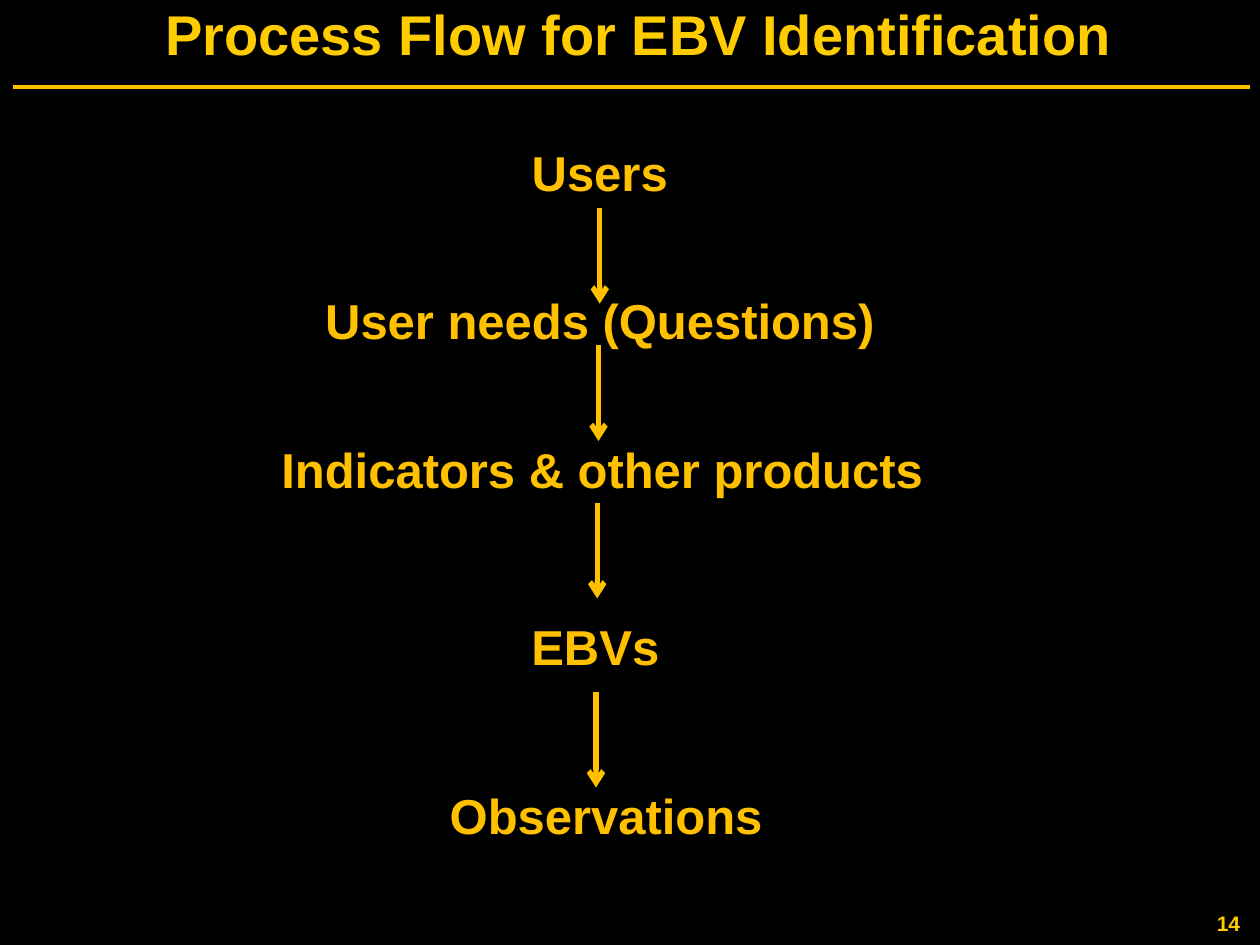
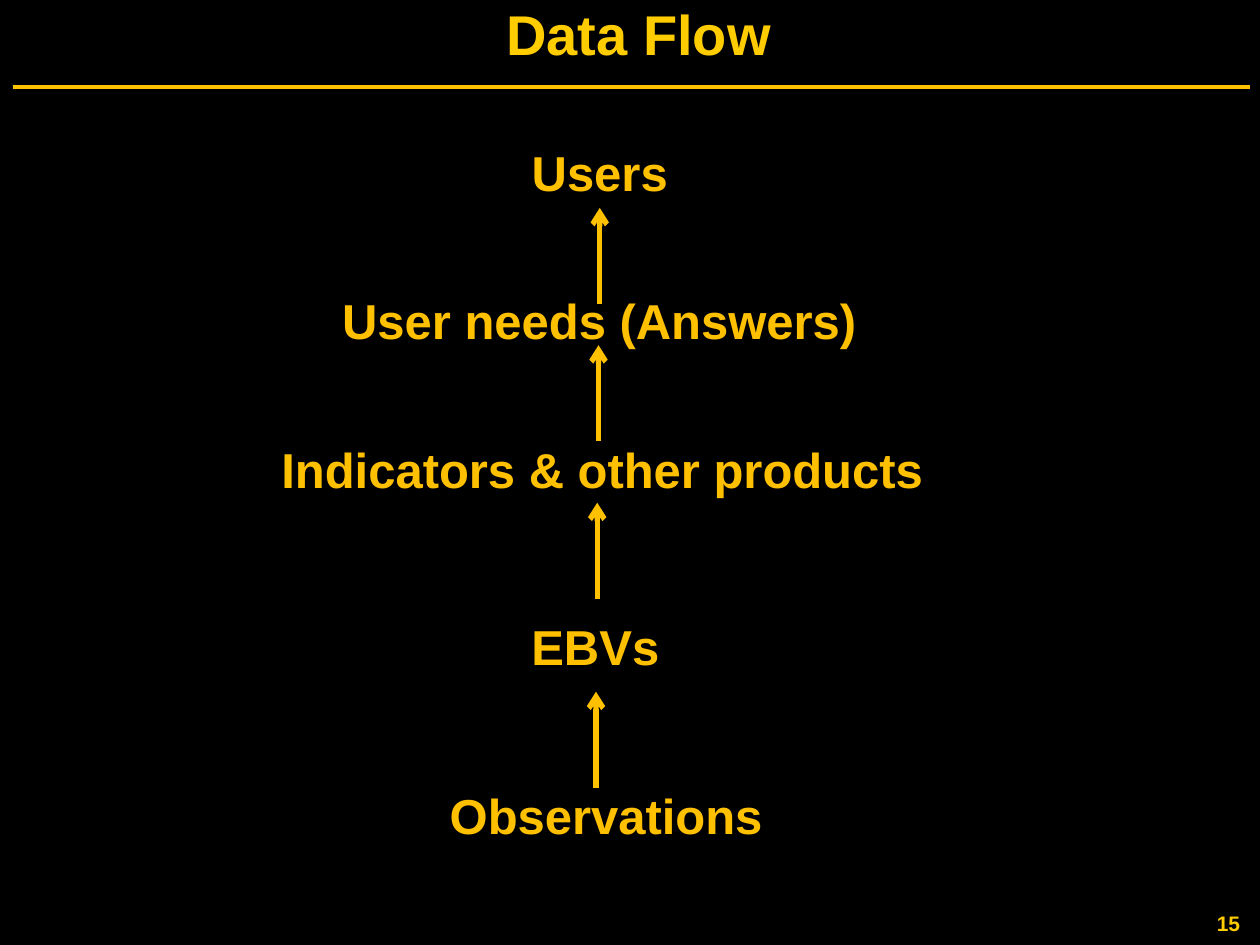
from dataclasses import dataclass

import lxml.etree
import pptx
import pptx.dml.color
import pptx.enum.shapes
import pptx.enum.text
import pptx.oxml.ns
import pptx.util

Inches = pptx.util.Inches


@dataclass(frozen=True)
class Theme:
    font: str = "Arial"
    background: str = "000000"
    heading: str = "FFCC00"
    accent: str = "FFC000"
    title_size: int = 32
    step_size: int = 28
    number_size: int = 12
    rule_width: int = 2
    arrow_width: int = 3


@dataclass(frozen=True)
class Box:
    left: float
    top: float
    width: float
    height: float

    def inside(self, left, top, width, height):
        """Return a box whose position is measured from this box's corner."""
        return Box(self.left + left, self.top + top, width, height)


THEME = Theme()
HEADER = Box(0.1, 0.01, 9.82, 0.68)
DIAGRAM = Box(2.1, 1.25, 5.36, 5.5)
PAGE_NUMBER = Box(9.5, 7.25, 0.5, 0.23)

ARROW_TOPS = (0.4, 1.49, 2.74, 4.24)
ARROW_LENGTH = 0.76
ARROW_LEFT = 2.66
ARROW_DRIFT = -0.01


def color(value):
    return pptx.dml.color.RGBColor.from_string(value)


def add_text(slide, box, text, *, size, text_color, line_spacing=0.6,
             space_before=0.3, wrap=True, grow=True, middle=False):
    """Add bold centred text; space_before is a share of the line height."""
    shape = slide.shapes.add_textbox(
        Inches(box.left), Inches(box.top), Inches(box.width), Inches(box.height))
    frame = shape.text_frame
    frame.word_wrap = wrap
    if grow:
        frame.auto_size = pptx.enum.text.MSO_AUTO_SIZE.SHAPE_TO_FIT_TEXT
    if middle:
        frame.vertical_anchor = pptx.enum.text.MSO_ANCHOR.MIDDLE
    paragraph = frame.paragraphs[0]
    paragraph.alignment = pptx.enum.text.PP_ALIGN.CENTER
    paragraph.line_spacing = line_spacing
    if space_before:
        properties = paragraph._p.get_or_add_pPr()
        properties.get_or_add_spcBef().set_spcPct(space_before)
    run = paragraph.add_run()
    run.text = text
    run.font.name = THEME.font
    run.font.size = pptx.util.Pt(size)
    run.font.bold = True
    run.font.color.rgb = color(text_color)


def add_line(slide, start, end, *, width, arrow_end=None):
    """Draw a line; arrow_end is "headEnd" (start), "tailEnd" (end) or None."""
    line = slide.shapes.add_connector(
        pptx.enum.shapes.MSO_CONNECTOR.STRAIGHT,
        *(Inches(value) for value in (*start, *end)))
    line.line.color.rgb = color(THEME.accent)
    line.line.width = pptx.util.Pt(width)
    if arrow_end:
        lxml.etree.SubElement(line.line._get_or_add_ln(),
                              pptx.oxml.ns.qn(f"a:{arrow_end}"), type="arrow")
    lxml.etree.SubElement(line._element.spPr, pptx.oxml.ns.qn("a:effectLst"))


def add_header(slide, box, title):
    add_text(slide, box.inside(1.07, 0, 7.8, 0.61), title,
             size=THEME.title_size, text_color=THEME.heading,
             line_spacing=0.8, space_before=0, grow=False, middle=True)
    bottom = box.top + box.height
    add_line(slide, (box.left, bottom), (box.left + box.width, bottom),
             width=THEME.rule_width)


def add_page_number(slide, box, number):
    add_text(slide, box, str(number),
             size=THEME.number_size, text_color=THEME.heading)


def add_flow(slide, box, user_needs, arrow_end):
    """Stack the five steps and join them with arrows in one direction."""
    needs_label, needs_left, needs_width = user_needs
    steps = (
        ("Users", 2.01, 0, 1.3, 0.4),
        (needs_label, needs_left, 1.17, needs_width, 0.38),
        ("Indicators & other products", 0, 2.35, 5.36, 0.38),
        ("EBVs", 2.01, 3.76, 1.23, 0.4),
        ("Observations", 1.35, 5.1, 2.72, 0.4),
    )
    for label, *place in steps:
        add_text(slide, box.inside(*place), label, size=THEME.step_size,
                 text_color=THEME.accent, wrap=False)
    for index, arrow_top in enumerate(ARROW_TOPS):
        x = box.left + ARROW_LEFT + index * ARROW_DRIFT
        y = box.top + arrow_top
        add_line(slide, (x, y), (x, y + ARROW_LENGTH),
                 width=THEME.arrow_width, arrow_end=arrow_end)


def add_flow_slide(presentation, number, title, user_needs, arrow_end):
    slide = presentation.slides.add_slide(presentation.slide_layouts[6])
    slide.background.fill.solid()
    slide.background.fill.fore_color.rgb = color(THEME.background)
    add_header(slide, HEADER, title)
    add_page_number(slide, PAGE_NUMBER, number)
    add_flow(slide, DIAGRAM, user_needs, arrow_end)


def main():
    presentation = pptx.Presentation()
    presentation.slide_width = Inches(10)
    presentation.slide_height = Inches(7.5)
    add_flow_slide(presentation, 14, "Process Flow for EBV Identification",
                   ("User needs (Questions)", 0.35, 4.62), "tailEnd")
    add_flow_slide(presentation, 15, "Data Flow",
                   ("User needs (Answers)", 0.49, 4.33), "headEnd")
    presentation.save("out.pptx")


if __name__ == "__main__":
    main()
